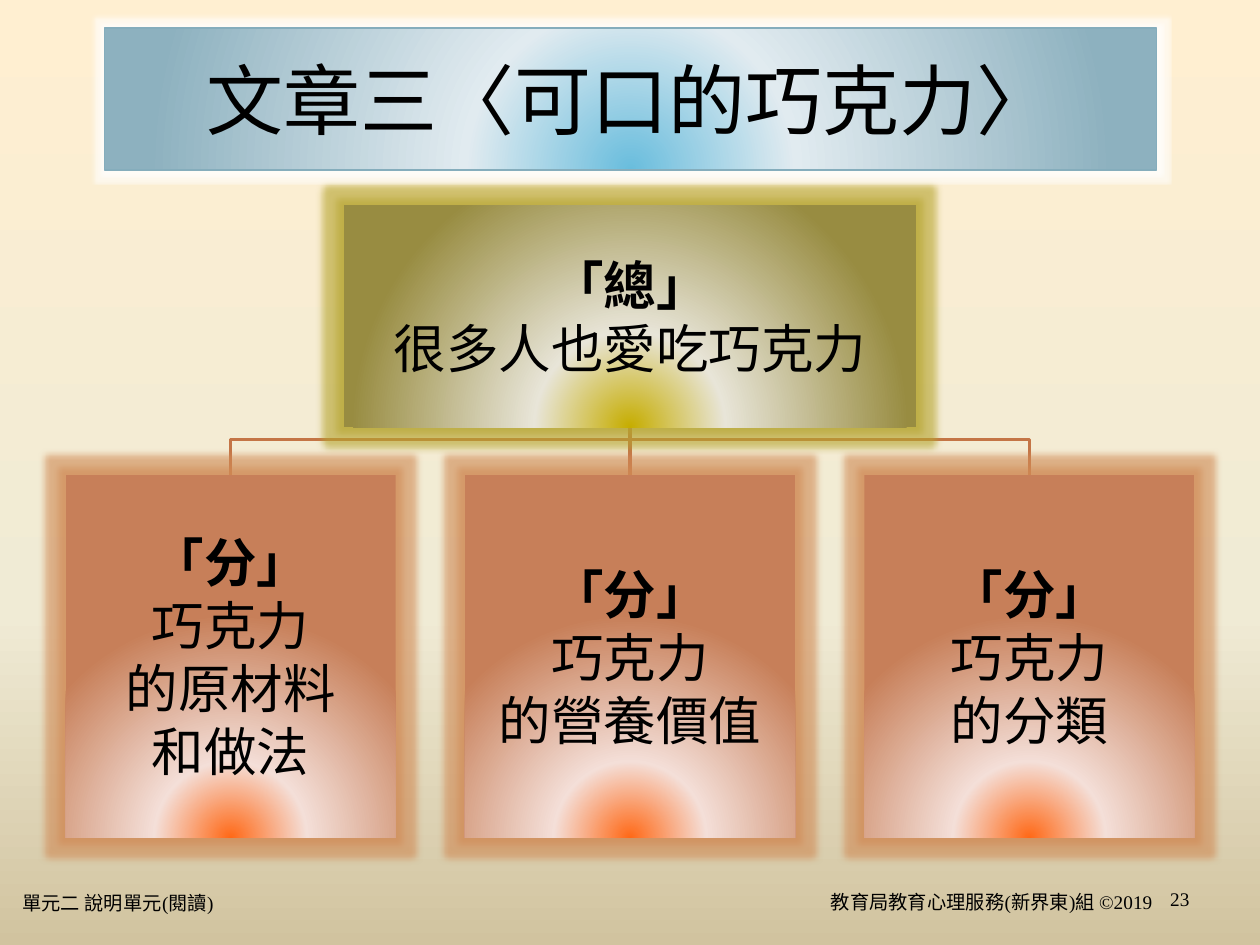
"""Build a slide showing the overview and three parts of a reading passage."""
from dataclasses import dataclass

from lxml.etree import SubElement
from pptx import Presentation
from pptx.dml.color import RGBColor
from pptx.enum.shapes import MSO_CONNECTOR, MSO_SHAPE
from pptx.enum.text import MSO_ANCHOR, PP_ALIGN
from pptx.oxml.ns import qn
from pptx.util import Inches, Pt


@dataclass(frozen=True)
class Theme:
    text: str = "000000"
    connector: str = "C47546"
    title_line: str = "85ADBC"
    backdrop: tuple = ((0, "FFEFD1"), (65, "F0EBD5"), (100, "D1C39F"))
    blue: tuple = ((0, "69BDDD"), (31, "E1EBF0"), (91, "8DB1BF"))
    olive: tuple = ((0, "C6AD00"), (31, "E8E5D8"), (91, "988C41"))
    orange: tuple = ((0, "FF6917"), (31, "F4DFD8"), (91, "C77F59"))
    white_glow: tuple = ("FFFFFF", 4, 60)
    olive_glow: tuple = ("B5A42E", 8, 60)
    orange_glow: tuple = ("D08A55", 8, 60)
    body_font: str = "Times New Roman"
    title_font: str = "Noto Sans CJK SC"
    title_size: int = 44
    body_size: int = 30
    footer_size: int = 11


class SlideBuilder:
    def __init__(self, page, theme):
        self.page = page
        self.theme = theme

    def gradient(self, fill, owner, stops, radial=True):
        fill.gradient()
        element = owner.find(".//" + qn("a:gradFill"))
        for child in list(element):
            element.remove(child)
        stop_list = SubElement(element, qn("a:gsLst"))
        for position, color in stops:
            stop = SubElement(stop_list, qn("a:gs"), pos=str(position * 1000))
            SubElement(stop, qn("a:srgbClr"), val=color)
        if radial:
            circle = SubElement(element, qn("a:path"), path="circle")
            SubElement(circle, qn("a:fillToRect"), l="50000", t="150000", r="50000", b="0")
        else:
            SubElement(element, qn("a:lin"), ang="5400000", scaled="0")

    def backdrop(self):
        self.gradient(self.page.background.fill, self.page.element, self.theme.backdrop, False)

    def glow(self, shape, color, radius, opacity):
        effects = shape.element.spPr.find(qn("a:effectLst"))
        halo = SubElement(effects, qn("a:glow"), rad=str(Pt(radius)))
        tint = SubElement(halo, qn("a:srgbClr"), val=color)
        SubElement(tint, qn("a:alpha"), val=str(opacity * 1000))

    def set_text(self, shape, text, size, font, align, anchor=MSO_ANCHOR.MIDDLE, inset=None):
        frame = shape.text_frame
        frame.word_wrap = True
        frame.vertical_anchor = anchor
        if inset is not None:
            frame.margin_left = frame.margin_right = Inches(inset)
            frame.margin_top = frame.margin_bottom = Inches(inset)
        para = frame.paragraphs[0]
        para.text = text
        para.alignment = align
        para.font.size = Pt(size)
        para.font.name = font
        para.font.color.rgb = RGBColor.from_string(self.theme.text)
        return para

    def panel(self, left, top, width, height, stops, glow):
        shape = self.page.shapes.add_shape(
            MSO_SHAPE.RECTANGLE, Inches(left), Inches(top), Inches(width), Inches(height))
        shape.shadow.inherit = False
        self.gradient(shape.fill, shape.element, stops)
        shape.line.fill.background()
        self.glow(shape, *glow)
        return shape

    def title(self, text, left, top, width, height):
        theme = self.theme
        shape = self.panel(left, top, width, height, theme.blue, theme.white_glow)
        shape.line.color.rgb = RGBColor.from_string(theme.title_line)
        shape.line.width = Pt(1)
        self.set_text(shape, text, theme.title_size, theme.title_font, PP_ALIGN.CENTER)

    def node(self, text, left, top, width, height, stops, glow):
        shape = self.panel(left, top, width, height, stops, glow)
        para = self.set_text(shape, text, self.theme.body_size, self.theme.body_font,
                             PP_ALIGN.CENTER, inset=0.02)
        para.space_after = Pt(18)
        para.runs[0].font.bold = True

    def style_line(self, line):
        line.color.rgb = RGBColor.from_string(self.theme.connector)
        line.width = Pt(2)

    def straight(self, x, top, bottom):
        link = self.page.shapes.add_connector(
            MSO_CONNECTOR.STRAIGHT, Inches(x), Inches(top), Inches(x), Inches(bottom))
        self.style_line(link.line)
        SubElement(link.element.spPr, qn("a:effectLst"))

    def elbow(self, start, end, top, turn, bottom):
        outline = self.page.shapes.build_freeform(Inches(start), Inches(top))
        corners = ((start, turn), (end, turn), (end, bottom))
        outline.add_line_segments([(Inches(x), Inches(y)) for x, y in corners], close=False)
        shape = outline.convert_to_shape()
        shape.shadow.inherit = False
        shape.fill.background()
        self.style_line(shape.line)

    def footer(self, text, left, top, width, align, anchor=MSO_ANCHOR.MIDDLE, inset=None):
        box = self.page.shapes.add_textbox(
            Inches(left), Inches(top), Inches(width), Inches(0.31))
        self.set_text(box, text, self.theme.footer_size, self.theme.body_font,
                      align, anchor, inset)


def main():
    deck = Presentation()
    deck.slide_width, deck.slide_height = Inches(10), Inches(7.5)
    theme = Theme()
    builder = SlideBuilder(deck.slides.add_slide(deck.slide_layouts[6]), theme)
    builder.backdrop()

    center, root_top, root_width, root_height = 5, 1.63, 4.54, 1.76
    root_bottom = root_top + root_height
    part_top, part_width, part_height, pitch = 3.77, 2.62, 2.88, 3.17
    parts = ("「分」\n巧克力\n的原材料\n和做法", "「分」\n巧克力\n的營養價值", "「分」\n巧克力\n的分類")
    part_centers = [center + pitch * step for step in (-1, 0, 1)]

    for x in part_centers:
        if x == center:
            builder.straight(x, root_bottom, part_top)
        else:
            builder.elbow(center, x, root_bottom, root_bottom + 0.1, part_top)
    builder.node("「總」\n很多人也愛吃巧克力", center - root_width / 2, root_top,
                 root_width, root_height, theme.olive, theme.olive_glow)
    for x, text in zip(part_centers, parts):
        builder.node(text, x - part_width / 2, part_top, part_width, part_height,
                     theme.orange, theme.orange_glow)

    builder.footer("單元二 說明單元(閱讀)", 0.08, 7, 3.5, PP_ALIGN.LEFT, MSO_ANCHOR.BOTTOM)
    builder.footer("教育局教育心理服務(新界東)組 ©2019", 5.83, 7, 4.08, PP_ALIGN.CENTER)
    builder.footer("23", 8.49, 6.98, 1, PP_ALIGN.RIGHT, inset=0.05)
    builder.title("文章三〈可口的巧克力〉", 0.83, 0.22, 8.35, 1.13)
    deck.save("out.pptx")


if __name__ == "__main__":
    main()
